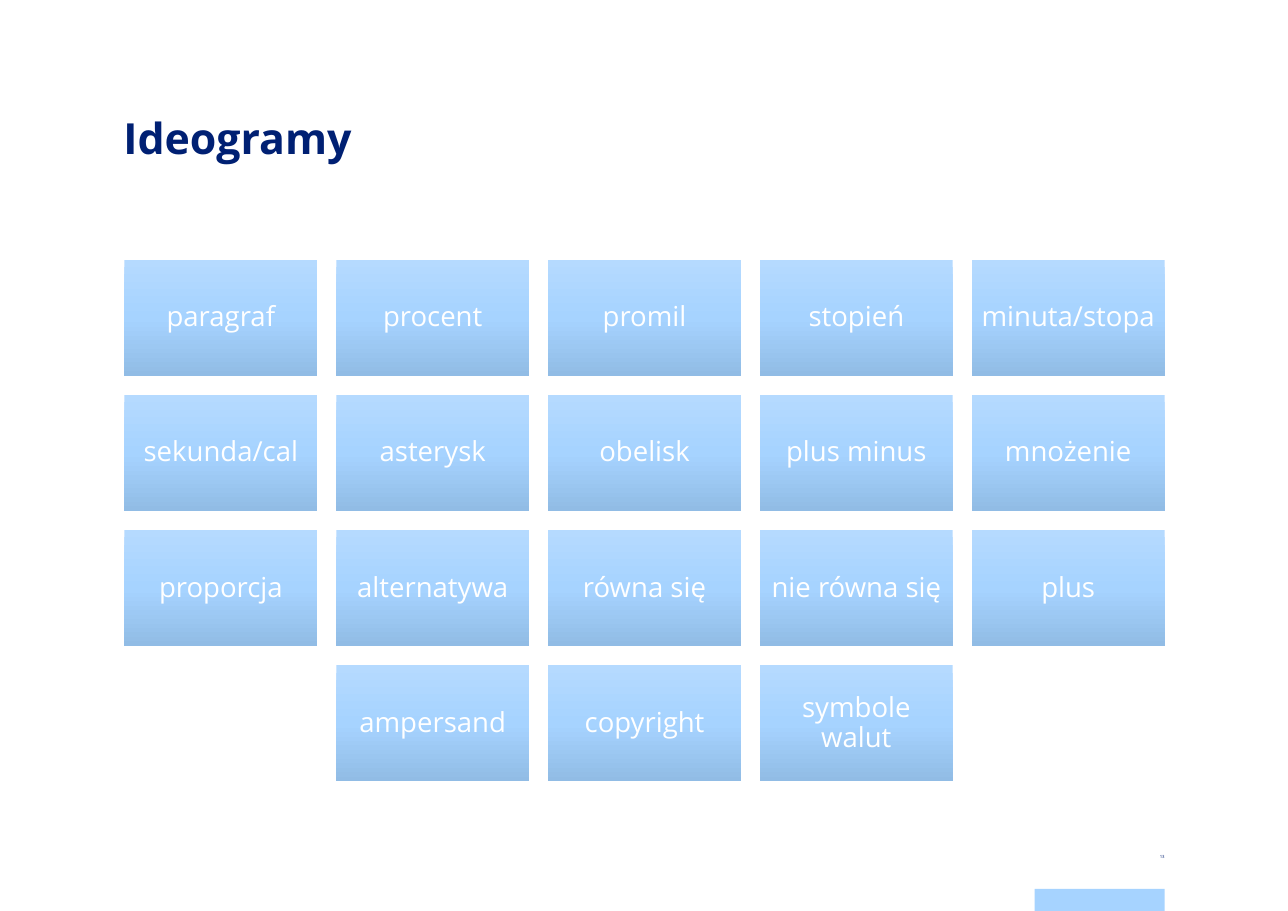
import copy

import pptx
import pptx.dml.color
import pptx.enum.shapes
import pptx.enum.text
import pptx.oxml.ns
import pptx.util

Inches, Pt = pptx.util.Inches, pptx.util.Pt
ALIGN, ANCHOR = pptx.enum.text.PP_ALIGN, pptx.enum.text.MSO_ANCHOR

TITLE = "Ideogramy"
PAGE_NUMBER = "13"
CARD_ROWS = [
    ["paragraf", "procent", "promil", "stopień", "minuta/stopa"],
    ["sekunda/cal", "asterysk", "obelisk", "plus minus", "mnożenie"],
    ["proporcja", "alternatywa", "równa się", "nie równa się", "plus"],
    ["ampersand", "copyright", "symbole walut"],
]
FONT = "Open Sans"
NAVY, SKY, WHITE = "002073", "A6D3FF", "FFFFFF"
CARD_GRADIENT = [(0, "B5DAFF"), (0.5, SKY), (1, "91BCE5")]

GRID_LEFT, GRID_TOP, GRID_WIDTH, GRID_HEIGHT = 1.13, 2.36, 9.44, 4.73
CARD_WIDTH, CARD_HEIGHT = 1.75, 1.05


def color(hex_string):
    return pptx.dml.color.RGBColor.from_string(hex_string)


def format_text(shape, size, hex_string, align, anchor, margins, line_spacing, space_after=0, bold=False):
    """Format the single paragraph of a shape; margins are horizontal, vertical."""
    frame = shape.text_frame
    frame.word_wrap = True
    frame.auto_size = pptx.enum.text.MSO_AUTO_SIZE.NONE
    frame.vertical_anchor = anchor
    frame.margin_left = frame.margin_right = Inches(margins[0])
    frame.margin_top = frame.margin_bottom = Inches(margins[1])
    paragraph = frame.paragraphs[0]
    paragraph.alignment = align
    paragraph.line_spacing = line_spacing
    paragraph.space_after = Pt(space_after)
    font = paragraph.runs[0].font
    font.name, font.size, font.bold = FONT, Pt(size), bold
    font.color.rgb = color(hex_string)


def add_rectangle(slide, left, top, width, height):
    """Add a rectangle without outline or shadow."""
    shape = slide.shapes.add_shape(
        pptx.enum.shapes.MSO_SHAPE.RECTANGLE,
        Inches(left), Inches(top), Inches(width), Inches(height))
    shape.shadow.inherit = False
    shape.line.fill.background()
    return shape


def fill_gradient(shape, stops):
    """Fill from top to bottom with three colour stops."""
    shape.fill.gradient()
    shape.fill.gradient_angle = 270
    stop_list = shape.fill._fill._gradFill.find(pptx.oxml.ns.qn("a:gsLst"))
    stop_list.append(copy.deepcopy(stop_list[-1]))
    for stop, (position, hex_string) in zip(shape.fill.gradient_stops, stops):
        stop.position = position
        stop.color.rgb = color(hex_string)


def add_cards(slide):
    """Spread the cards evenly over the grid, centring a short row."""
    columns = max(len(row) for row in CARD_ROWS)
    column_step = (GRID_WIDTH - CARD_WIDTH) / (columns - 1)
    row_step = (GRID_HEIGHT - CARD_HEIGHT) / (len(CARD_ROWS) - 1)
    for row_index, labels in enumerate(CARD_ROWS):
        first_column = (columns - len(labels)) / 2
        for column, label in enumerate(labels):
            card = add_rectangle(
                slide,
                GRID_LEFT + (first_column + column) * column_step,
                GRID_TOP + row_index * row_step,
                CARD_WIDTH, CARD_HEIGHT)
            fill_gradient(card, CARD_GRADIENT)
            card.text_frame.text = label
            format_text(card, 18, WHITE, ALIGN.CENTER, ANCHOR.MIDDLE, (0.07, 0.07), 0.9, 6.3)


def main():
    presentation = pptx.Presentation()
    presentation.slide_width = Inches(11.69)
    presentation.slide_height = Inches(8.27)
    slide = presentation.slides.add_slide(presentation.slide_layouts[5])
    slide.background.fill.solid()
    slide.background.fill.fore_color.rgb = color(WHITE)

    footer_bar = add_rectangle(slide, 9.39, 8.07, 1.18, 0.2)
    footer_bar.fill.solid()
    footer_bar.fill.fore_color.rgb = color(SKY)

    title = slide.shapes.title
    title.left, title.top = Inches(1.12), Inches(0.98)
    title.width, title.height = Inches(9.45), Inches(1.18)
    title.text_frame.text = TITLE
    format_text(title, 28, NAVY, ALIGN.LEFT, ANCHOR.TOP, (0, 0), Pt(36), bold=True)

    page_number = slide.shapes.add_textbox(Inches(9.39), Inches(7.68), Inches(1.18), Inches(0.2))
    page_number.text_frame.text = PAGE_NUMBER
    format_text(page_number, 2.8, NAVY, ALIGN.RIGHT, ANCHOR.MIDDLE, (0, 0.08), 0.7, 6)

    add_cards(slide)
    presentation.save("out.pptx")


if __name__ == "__main__":
    main()
